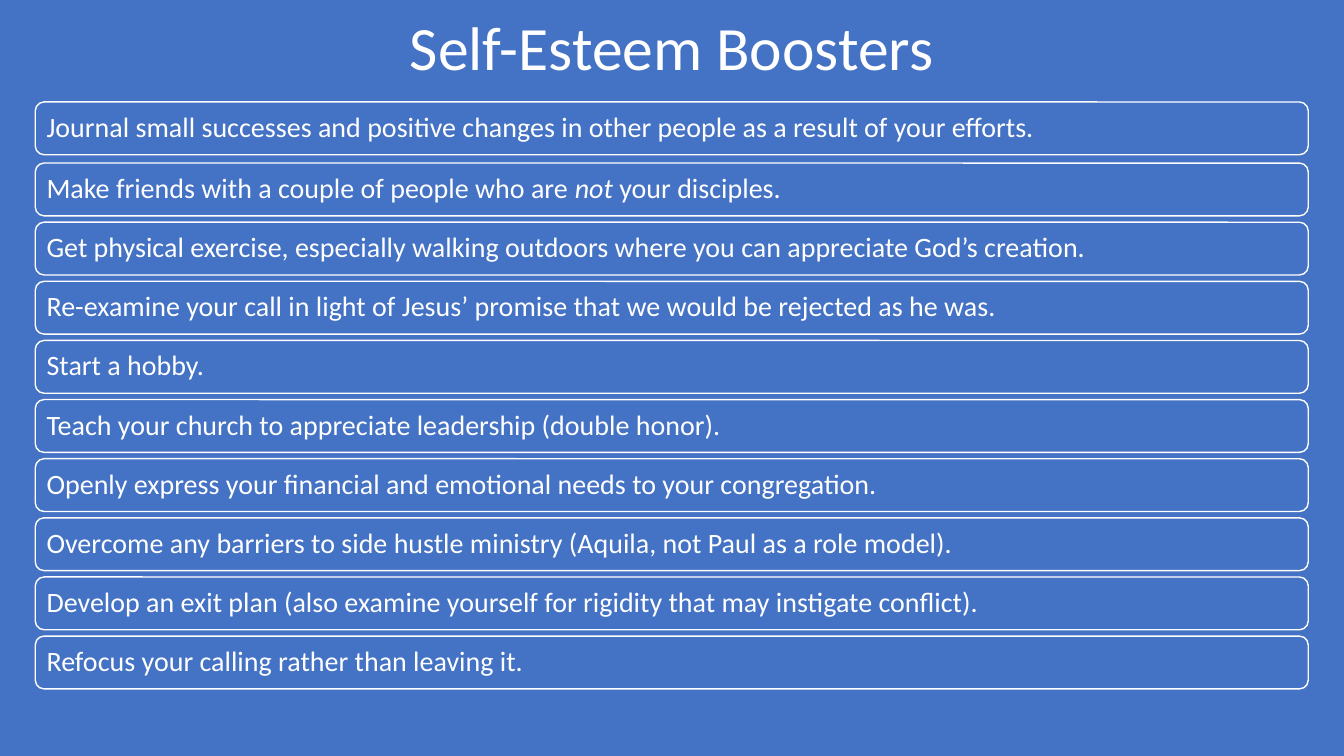
from pptx import Presentation
from pptx import util as u
from pptx.dml import color
from pptx.enum import shapes, text

TITLE = "Self-Esteem Boosters"
BOOSTERS = [
    ["Journal small successes and positive changes in other people as a result of your efforts."],
    ["Make friends with a couple of people who are ", "not", " your disciples."],
    ["Get physical exercise, especially walking outdoors where you can appreciate God’s creation."],
    ["Re-examine your call in light of Jesus’ promise that we would be rejected as he was."],
    ["Start a hobby."],
    ["Teach your church to appreciate leadership (double honor)."],
    ["Openly express your financial and emotional needs to your congregation."],
    ["Overcome any barriers to side hustle ministry (Aquila, not Paul as a role model)."],
    ["Develop an exit plan (also examine yourself for rigidity that may instigate conflict)."],
    ["Refocus your calling rather than leaving it."],
]
EMPHASIS = "not"
BLUE, WHITE = "4472C4", "FFFFFF"
FIRST_TOP, SECOND_TOP, STEP = 2.57, 4.11, 1.49
BAR_LEFT, BAR_WIDTH, BAR_HEIGHT = 0.89, 32.08, 1.33
INSET = 0.22


def paint(target, value):
    target.rgb = color.RGBColor.from_string(value)


def fill_solid(fill, value):
    fill.solid()
    paint(fill.fore_color, value)


def write(box, spans, size, align):
    frame = box.text_frame
    frame.word_wrap = True
    frame.vertical_anchor = text.MSO_ANCHOR.MIDDLE
    para = frame.paragraphs[0]
    para.alignment = align
    para.line_spacing = 0.9
    para.font.name = "Calibri"
    para.font.size = u.Pt(size)
    paint(para.font.color, WHITE)
    for words in spans:
        span = para.add_run()
        span.text = words
        if words == EMPHASIS:
            span.font.italic = True
    return frame


def add_bar(page, top, spans):
    bar = page.shapes.add_shape(
        shapes.MSO_SHAPE.ROUNDED_RECTANGLE,
        u.Cm(BAR_LEFT), u.Cm(top), u.Cm(BAR_WIDTH), u.Cm(BAR_HEIGHT))
    bar.shadow.inherit = False
    fill_solid(bar.fill, BLUE)
    paint(bar.line.color, WHITE)
    bar.line.width = u.Pt(1)
    frame = write(bar, spans, 20, text.PP_ALIGN.LEFT)
    frame.margin_left = frame.margin_right = u.Cm(INSET)
    frame.margin_top = frame.margin_bottom = u.Cm(INSET)


def main():
    deck = Presentation()
    deck.slide_width, deck.slide_height = u.Cm(33.87), u.Cm(19.05)
    page = deck.slides.add_slide(deck.slide_layouts[6])
    fill_solid(page.background.fill, BLUE)

    title = page.shapes.add_textbox(u.Cm(2.33), u.Cm(0.28), u.Cm(29.21), u.Cm(1.98))
    write(title, [TITLE], 44, text.PP_ALIGN.CENTER)

    for index, spans in enumerate(BOOSTERS):
        top = SECOND_TOP + (index - 1) * STEP if index else FIRST_TOP
        add_bar(page, top, spans)

    deck.save("out.pptx")


if __name__ == "__main__":
    main()
